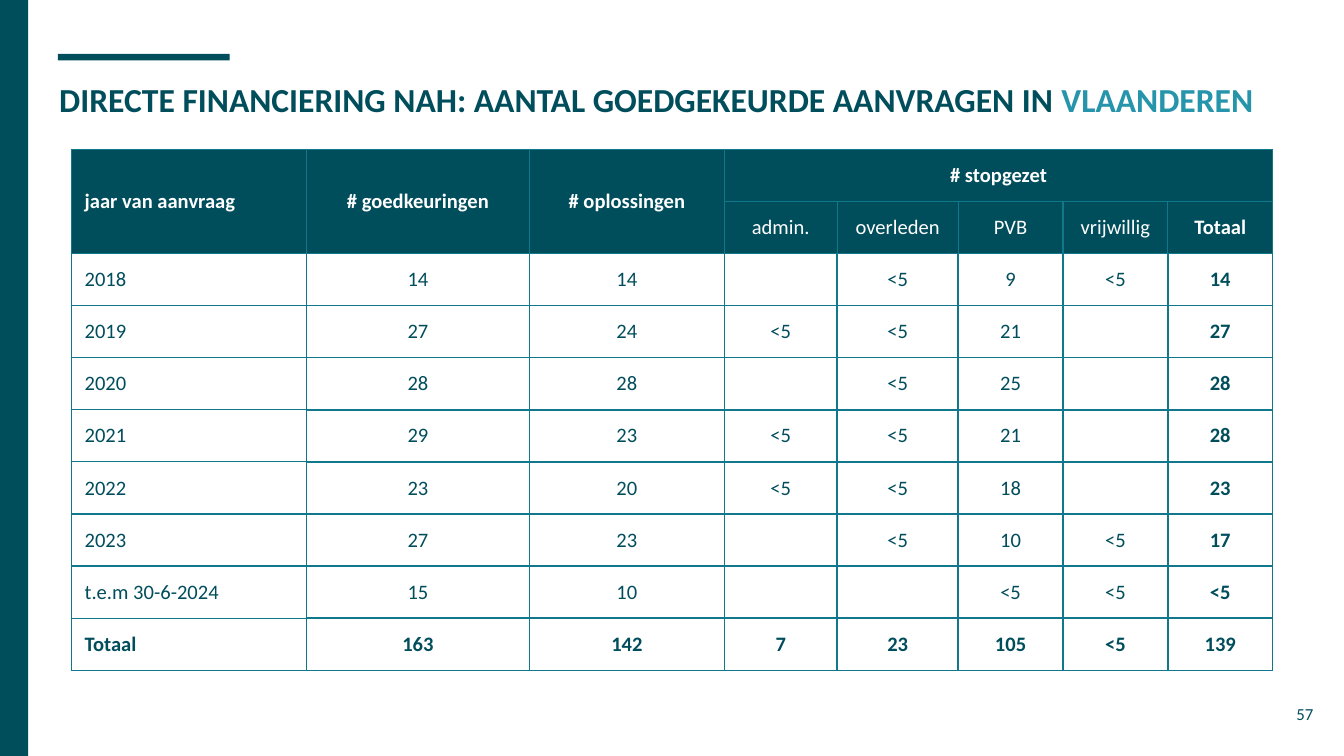
from lxml.etree import SubElement
from pptx import Presentation
from pptx.dml.color import RGBColor
from pptx.enum.shapes import MSO_SHAPE
from pptx.enum.text import MSO_ANCHOR, PP_ALIGN
from pptx.oxml.ns import qn
from pptx.util import Inches, Pt

SLIDE_WIDTH = 10
SLIDE_HEIGHT = SLIDE_WIDTH * 9 / 16
COLORS = {"petrol": "004D5C", "accent": "2695AB", "border": "11788C", "white": "FFFFFF"}
COLUMN_WIDTHS = [1.75, 1.66, 1.45, 0.84, 0.9, 0.78, 0.78, 0.78]
TABLE_HEIGHT = 3.88
HEADER_ROWS = 2
ROWS = [
    ["jaar van aanvraag", "# goedkeuringen", "# oplossingen", "# stopgezet", "", "", "", ""],
    ["", "", "", "admin.", "overleden", "PVB", "vrijwillig", "Totaal"],
    ["2018", "14", "14", "", "<5", "9", "<5", "14"],
    ["2019", "27", "24", "<5", "<5", "21", "", "27"],
    ["2020", "28", "28", "", "<5", "25", "", "28"],
    ["2021", "29", "23", "<5", "<5", "21", "", "28"],
    ["2022", "23", "20", "<5", "<5", "18", "", "23"],
    ["2023", "27", "23", "", "<5", "10", "<5", "17"],
    ["t.e.m 30-6-2024", "15", "10", "", "", "<5", "<5", "<5"],
    ["Totaal", "163", "142", "7", "23", "105", "<5", "139"],
]


def rgb(name):
    return RGBColor.from_string(COLORS[name])


def add_text(paragraph, text, size=11, color="petrol", bold=False, align=PP_ALIGN.LEFT):
    paragraph.alignment = align
    run = paragraph.add_run()
    run.text = text
    run.font.name = "Calibri"
    run.font.size = Pt(size)
    run.font.bold = bold
    run.font.color.rgb = rgb(color)


def set_margins(frame, horizontal=0.1, vertical=0.1):
    """Set the inner margins of a text frame or a table cell."""
    frame.margin_left = frame.margin_right = Inches(horizontal)
    frame.margin_top = frame.margin_bottom = Inches(vertical)


def add_bar(slide, left, top, width, height):
    bar = slide.shapes.add_shape(
        MSO_SHAPE.RECTANGLE, Inches(left), Inches(top), Inches(width), Inches(height))
    bar.shadow.inherit = False
    bar.fill.solid()
    bar.fill.fore_color.rgb = rgb("petrol")
    bar.line.fill.background()


def fill_title(slide):
    title = slide.shapes.title
    title.left, title.top = Inches(0.34), Inches(0.49)
    title.width, title.height = Inches(9.32), Inches(0.63)
    frame = title.text_frame
    frame.word_wrap = True
    frame.vertical_anchor = MSO_ANCHOR.TOP
    set_margins(frame)
    heading = frame.paragraphs[0]
    add_text(heading, "DIRECTE FINANCIERING NAH: AANTAL GOEDGEKEURDE AANVRAGEN IN ",
             size=18, bold=True)
    add_text(heading, "VLAANDEREN", size=18, color="accent", bold=True)


def set_borders(cell, width):
    properties = cell._tc.get_or_add_tcPr()
    for side in ("lnL", "lnR", "lnT", "lnB"):
        line = SubElement(properties, qn(f"a:{side}"), w=str(Pt(width)))
        fill = SubElement(line, qn("a:solidFill"))
        SubElement(fill, qn("a:srgbClr"), val=COLORS["border"])


def format_cell(cell, text, row, column):
    is_header = row < HEADER_ROWS
    is_label = column == 0
    is_total = column == len(COLUMN_WIDTHS) - 1 or row == len(ROWS) - 1
    set_borders(cell, 0.75 if is_header or is_label else 1)
    if is_header:
        cell.fill.solid()
        cell.fill.fore_color.rgb = rgb("petrol")
    else:
        cell.fill.background()
    cell.vertical_anchor = MSO_ANCHOR.MIDDLE
    # Empty cells get no vertical margin, so that they do not stretch their row.
    set_margins(cell, 0.1 if is_label or row == 0 else 0.05, 0.1 if text else 0)
    if text:
        add_text(cell.text_frame.paragraphs[0], text,
                 color="white" if is_header else "petrol",
                 bold=row == 0 or is_total,
                 align=PP_ALIGN.LEFT if is_label else PP_ALIGN.CENTER)


def add_requests_table(slide):
    table = slide.shapes.add_table(
        len(ROWS), len(COLUMN_WIDTHS), Inches(0.53), Inches(1.11),
        Inches(sum(COLUMN_WIDTHS)), Inches(TABLE_HEIGHT)).table
    table.first_row = table.horz_banding = False
    for column, width in zip(table.columns, COLUMN_WIDTHS):
        column.width = Inches(width)
    for row, texts in enumerate(ROWS):
        for column, text in enumerate(texts):
            format_cell(table.cell(row, column), text, row, column)
    for column in range(3):
        table.cell(0, column).merge(table.cell(1, column))
    table.cell(0, 3).merge(table.cell(0, 7))


def add_page_number(slide, number):
    frame = slide.shapes.add_textbox(
        Inches(9.27), Inches(5.1), Inches(0.6), Inches(0.43)).text_frame
    frame.word_wrap = True
    frame.vertical_anchor = MSO_ANCHOR.MIDDLE
    set_margins(frame)
    add_text(frame.paragraphs[0], number, size=9, align=PP_ALIGN.RIGHT)


def main():
    presentation = Presentation()
    presentation.slide_width = Inches(SLIDE_WIDTH)
    presentation.slide_height = Inches(SLIDE_HEIGHT)
    slide = presentation.slides.add_slide(presentation.slide_layouts[5])
    add_bar(slide, 0.43, 0.4, 1.28, 0.05)
    add_bar(slide, 0, 0, 0.21, SLIDE_HEIGHT)
    fill_title(slide)
    add_page_number(slide, "57")
    add_requests_table(slide)
    presentation.save("out.pptx")


if __name__ == "__main__":
    main()
